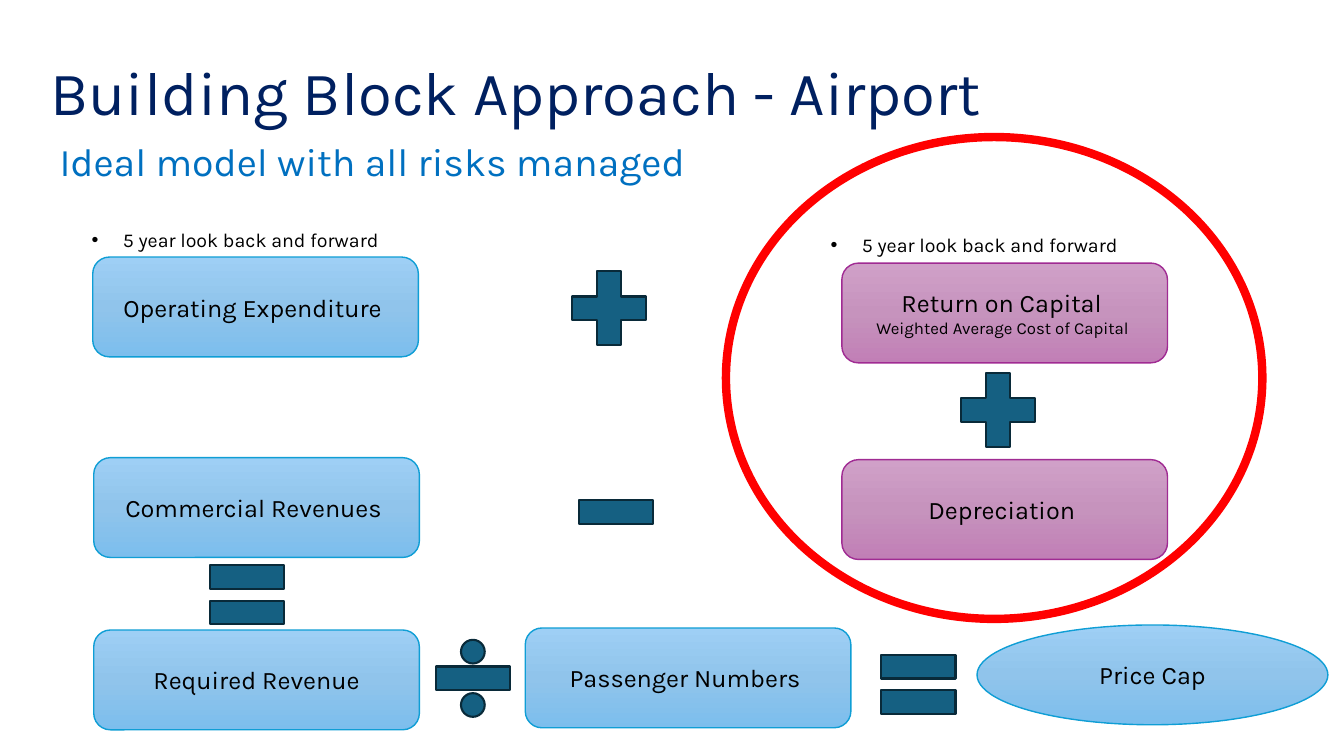
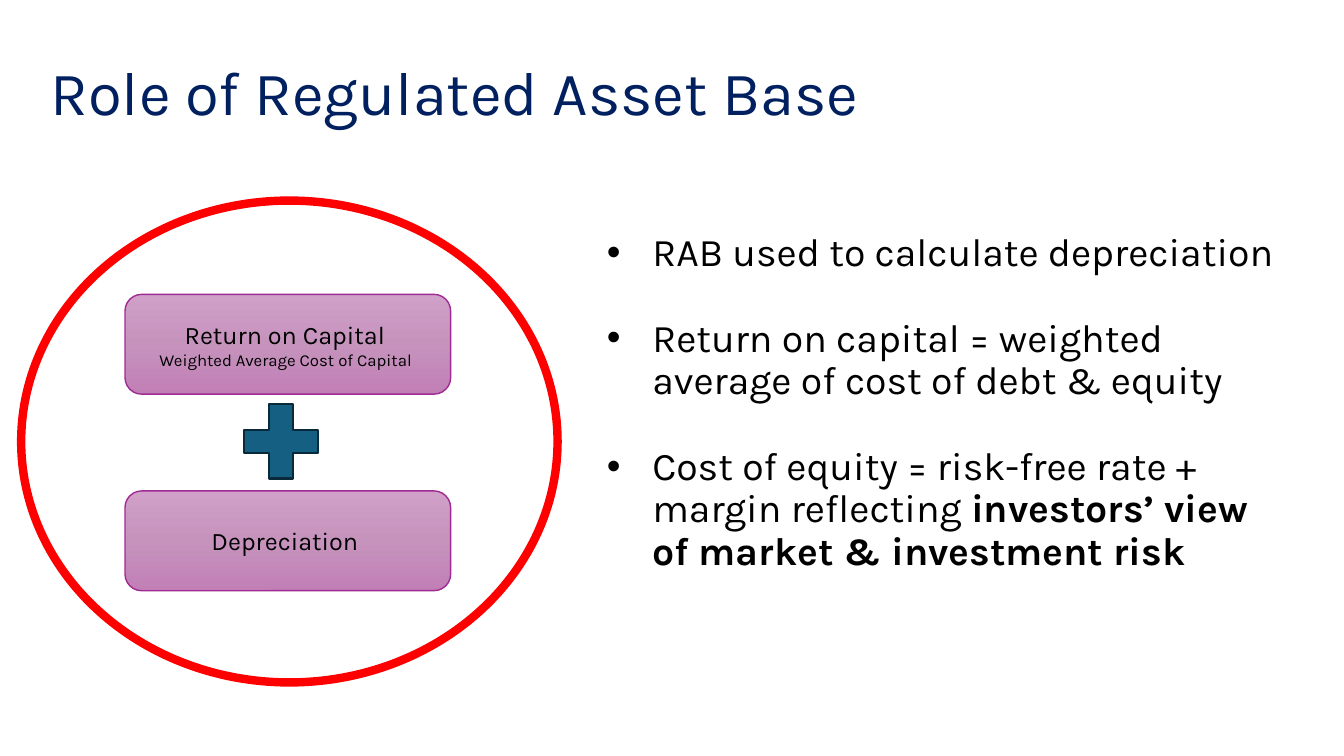
from copy import deepcopy

from lxml.etree import SubElement
from pptx import Presentation
from pptx.dml.color import RGBColor
from pptx.enum.shapes import MSO_SHAPE
from pptx.enum.text import MSO_ANCHOR, MSO_AUTO_SIZE, PP_ALIGN
from pptx.oxml.ns import qn
from pptx.util import Inches, Pt


class Theme:
    font = "Karla"
    title = {"size": 44, "color": "002060"}
    subtitle = {"size": 28, "color": "0070C0"}
    body = {"size": 28, "color": "000000"}
    label = {"size": 18, "color": "000000"}
    note = {"size": 14, "color": "000000"}
    detail = {"size": 12, "color": "000000"}
    blue = {"stops": ("9ECFF5", "90C4EB", "7CBEED"), "line": "0F9ED5"}
    purple = {"stops": ("D0A0C8", "C693BD", "C17FB6"), "line": "A02B93"}
    operator_fill = "156082"
    operator_line = "092A39"
    highlight = "FF0000"


BOX_SIZE = (3.23, 0.99)
OPERATOR_SIZE = (1, 1)
RING_SIZE = (5.32, 4.78)


def place(shape, left, top, width, height):
    frame = {"left": left, "top": top, "width": width, "height": height}
    for name, value in frame.items():
        setattr(shape, name, Inches(value))


def format_paragraph(paragraph, **values):
    for name, value in values.items():
        setattr(paragraph, name, value)


def add_run(paragraph, text, style, bold=False):
    run = paragraph.add_run()
    run.text = text
    values = {"name": Theme.font, "size": Pt(style["size"]), "bold": bold}
    for name, value in values.items():
        setattr(run.font, name, value)
    run.font.color.rgb = RGBColor.from_string(style["color"])


def set_bullet(paragraph, indent, character=None):
    """Set a hanging bullet, or no bullet when character is None."""
    properties = paragraph._p.get_or_add_pPr()
    properties.set("marL", str(Inches(indent)))
    properties.set("indent", str(-Inches(indent)))
    if character:
        SubElement(properties, qn("a:buFont"), typeface="Arial")
        SubElement(properties, qn("a:buChar"), char=character)
    else:
        SubElement(properties, qn("a:buNone"))


def set_line(shape, color, width):
    shape.line.color.rgb = RGBColor.from_string(color)
    shape.line.width = Pt(width)


def set_gradient(shape, colors):
    """Fill from top to bottom with three evenly spaced colours."""
    shape.fill.gradient()
    shape.fill.gradient_angle = 270
    first = shape._element.spPr.find(".//" + qn("a:gs"))
    first.addnext(deepcopy(first))
    for index, (stop, color) in enumerate(zip(shape.fill.gradient_stops, colors)):
        stop.position = index / (len(colors) - 1)
        stop.color.rgb = RGBColor.from_string(color)


def add_plain_shape(slide, kind, position, size):
    shape = slide.shapes.add_shape(kind, *map(Inches, position + size))
    shape.shadow.inherit = False
    return shape


def add_block(slide, position, lines, colors=Theme.blue,
              kind=MSO_SHAPE.ROUNDED_RECTANGLE, size=BOX_SIZE):
    """Add a gradient block; the first line is its label, others are details."""
    block = add_plain_shape(slide, kind, position, size)
    set_gradient(block, colors["stops"])
    set_line(block, colors["line"], 1)
    frame = block.text_frame
    frame.word_wrap = True
    frame.vertical_anchor = MSO_ANCHOR.MIDDLE
    for index, text in enumerate(lines):
        paragraph = frame.add_paragraph() if index else frame.paragraphs[0]
        paragraph.alignment = PP_ALIGN.CENTER
        add_run(paragraph, text, Theme.detail if index else Theme.label)


def add_operator(slide, kind, position):
    operator = add_plain_shape(slide, kind, position, OPERATOR_SIZE)
    operator.fill.solid()
    operator.fill.fore_color.rgb = RGBColor.from_string(Theme.operator_fill)
    set_line(operator, Theme.operator_line, 1.5)


def add_ring(slide, position):
    ring = add_plain_shape(slide, MSO_SHAPE.OVAL, position, RING_SIZE)
    ring.fill.background()
    set_line(ring, Theme.highlight, 6)


def add_capital_blocks(slide, left, top, ring_position):
    """Add return on capital plus depreciation, circled by a ring."""
    add_block(slide, (left, top),
              ("Return on Capital ", "Weighted Average Cost of Capital "), Theme.purple)
    add_block(slide, (left, top + 1.95), ("Depreciation ",), Theme.purple)
    add_operator(slide, MSO_SHAPE.MATH_PLUS, (left + 1.05, top + 0.96))
    add_ring(slide, ring_position)


def add_note(slide, left, top, width, text):
    box = slide.shapes.add_textbox(*map(Inches, (left, top, width, 0.34)))
    box.text_frame.word_wrap = True
    box.text_frame.auto_size = MSO_AUTO_SIZE.SHAPE_TO_FIT_TEXT
    paragraph = box.text_frame.paragraphs[0]
    set_bullet(paragraph, 0.31, "•")
    add_run(paragraph, text, Theme.note)


def add_titled_slide(presentation, title):
    slide = presentation.slides.add_slide(presentation.slide_layouts[1])
    shape = slide.shapes.title
    place(shape, 0.4, 0.6, 12.08, 0.69)
    shape.text_frame.auto_size = MSO_AUTO_SIZE.NONE
    shape.text_frame.vertical_anchor = MSO_ANCHOR.MIDDLE
    paragraph = shape.text_frame.paragraphs[0]
    format_paragraph(paragraph, alignment=PP_ALIGN.LEFT, line_spacing=0.9)
    add_run(paragraph, title, Theme.title)
    return slide


def fill_body(slide, bounds, items, style, indent=0, bullet=None):
    """Fill the body placeholder; each item is a list of (text, bold) pairs."""
    body = slide.placeholders[1]
    place(body, *bounds)
    frame = body.text_frame
    frame.auto_size = MSO_AUTO_SIZE.NONE
    for index, item in enumerate(items):
        paragraph = frame.add_paragraph() if index else frame.paragraphs[0]
        set_bullet(paragraph, indent, bullet)
        format_paragraph(paragraph, line_spacing=0.9,
                         space_before=Pt(31 if index else 0))
        for text, bold in item:
            add_run(paragraph, text, style, bold)


def build_approach_slide(presentation):
    slide = add_titled_slide(presentation, "Building Block Approach - Airport")
    fill_body(slide, (0.49, 1.36, 11.57, 0.5),
              [[("Ideal model with all risks managed", False)]], Theme.subtitle)
    for left, top, width in ((0.81, 2.21, 3.62), (8.14, 2.26, 4.13)):
        add_note(slide, left, top, width, "5 year look back and forward")
    for position, text in (
        ((0.92, 2.55), "Operating Expenditure "),
        ((0.93, 4.54), "Commercial Revenues "),
        ((0.93, 6.25), "Required Revenue"),
        ((5.21, 6.23), "Passenger Numbers "),
    ):
        add_block(slide, position, (text,))
    add_block(slide, (9.69, 6.2), ("Price Cap",), kind=MSO_SHAPE.OVAL, size=(3.48, 0.99))
    for kind, position in (
        (MSO_SHAPE.MATH_PLUS, (5.54, 2.56)),
        (MSO_SHAPE.MATH_MINUS, (5.61, 4.58)),
        (MSO_SHAPE.MATH_EQUAL, (1.95, 5.4)),
        (MSO_SHAPE.MATH_DIVIDE, (4.19, 6.23)),
        (MSO_SHAPE.MATH_EQUAL, (8.61, 6.29)),
    ):
        add_operator(slide, kind, position)
    add_capital_blocks(slide, 8.35, 2.61, (7.2, 1.36))


def build_asset_base_slide(presentation):
    slide = add_titled_slide(presentation, "Role of Regulated Asset Base")
    add_capital_blocks(slide, 1.24, 2.92, (0.21, 1.99))
    points = [
        [("RAB used to calculate depreciation", False)],
        [("Return on capital = weighted average of cost of debt & equity", False)],
        [("Cost of equity = risk-free rate + margin reflecting ", False),
         ("investors’ view of market & investment risk", True)],
    ]
    fill_body(slide, (5.92, 2.26, 6.95, 4.78), points, Theme.body, 0.45, "•")


def main():
    presentation = Presentation()
    presentation.slide_width = Inches(13.33)
    presentation.slide_height = Inches(7.5)
    build_approach_slide(presentation)
    build_asset_base_slide(presentation)
    presentation.save("out.pptx")


if __name__ == "__main__":
    main()
